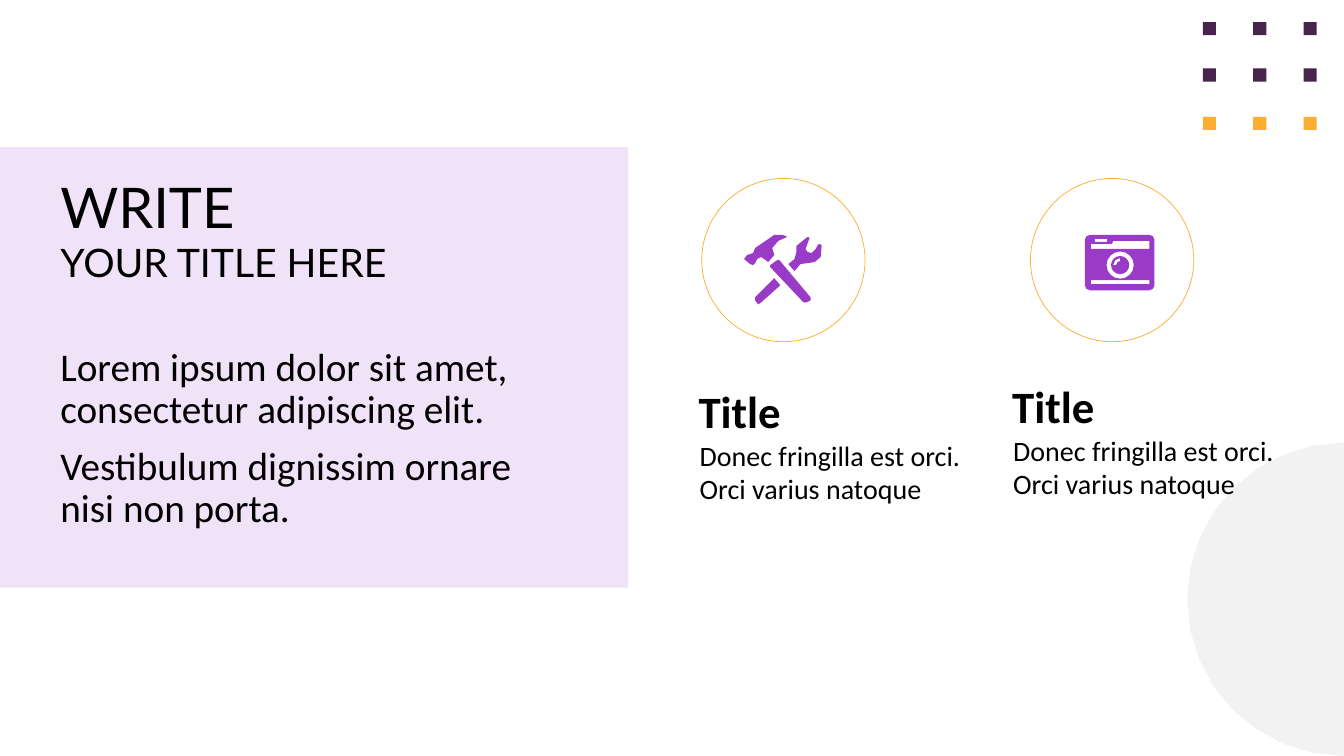
from dataclasses import dataclass
from itertools import product
from math import cos, radians, sin

from lxml.etree import SubElement
from pptx import Presentation
from pptx.dml.color import RGBColor
from pptx.enum.shapes import MSO_SHAPE
from pptx.enum.text import MSO_ANCHOR, MSO_AUTO_SIZE
from pptx.oxml.ns import qn
from pptx.shapes.autoshape import Shape
from pptx.shapes.shapetree import GroupShapes, SlideShapes
from pptx.util import Pt

PX = 9144  # 100 px to the inch
COLORS = {
    "purple": "993BC7",
    "plum": "47244C",
    "amber": "FDAD32",
    "gray": "F2F2F2",
    "black": "000000",
}
Point = tuple[float, float]
Path = list[Point]
Shapes = SlideShapes | GroupShapes


@dataclass
class Label:
    lines: list[str]
    left: int
    top: int
    width: int
    height: int
    size: int
    face: str = "Calibri"
    bold: bool = False
    space: int = 0
    pitch: float = 1.0
    grow: bool = True


@dataclass
class Topic:
    ring: int
    left: int
    top: int


TOPICS = [Topic(696, 683, 376), Topic(1022, 994, 371)]
LABELS = [
    Label(["WRITE"], 50, 166, 528, 77, 40, "Lato"),
    Label(["YOUR TITLE HERE"], 50, 232, 572, 57, 28, "Lato"),
    Label(
        [
            "Lorem ipsum dolor sit amet, consectetur adipiscing elit.",
            "Vestibulum dignissim ornare nisi non porta.",
        ],
        50, 340, 528, 270, 28, space=10, pitch=0.9, grow=False,
    ),
]

HAMMER: Path = [
    (751, 257), (755, 255), (762, 260), (768, 253), (766, 246), (772, 239),
    (781, 235), (776, 233), (768, 233), (755, 242), (749, 246), (747, 251),
    (741, 253), (738, 257), (744, 262), (747, 263), (749, 261),
]
HANDLE: Path = [
    (773, 258), (771, 258), (764, 263), (764, 265), (797, 300), (800, 300),
    (804, 298), (804, 295),
]
WRENCH: Path = [
    (815, 243), (812, 242), (809, 247), (805, 251), (801, 250), (799, 247),
    (803, 236), (801, 235), (790, 244), (790, 250), (788, 257), (782, 262),
    (788, 269), (794, 262), (801, 261), (808, 260), (814, 255),
]
SHAFT: Path = [
    (749, 295), (749, 298), (752, 302), (755, 300), (774, 283), (768, 276),
]


def arc(
    x: float, y: float, radius: float, start: int, end: int, count: int
) -> Path:
    """Give the ends of count equal steps along an arc."""
    turns = [radians(start + (end - start) * i / count) for i in range(count + 1)]
    return [(x + radius * cos(t), y + radius * sin(t)) for t in turns]


def box(left: int, top: int, right: int, base: int) -> Path:
    return [(left, top), (right, top), (right, base), (left, base)]


def camera() -> list[Path]:
    """Give a rounded body, its cut-outs and the lens."""
    x, y = 1111, 263
    corners = [(1140, 283), (1081, 283), (1081, 238), (1140, 238)]
    body = [
        point
        for i, (cx, cy) in enumerate(corners)
        for point in arc(cx, cy, 5, 90 * i, 90 * i + 90, 2)
    ]
    window = [
        (1140, 239), (1104, 239), (1103, 242), (1082, 242), (1082, 247),
        (1140, 247),
    ]
    glint = arc(x, y, 7, 180, 270, 2) + arc(x, y, 4, 270, 180, 2)
    lens = [arc(x, y, radius, 0, 360, 16)[:-1] for radius in (13.5, 9)]
    cuts = [window, box(1082, 278, 1140, 282), box(1086, 237, 1098, 240)]
    return [body, *cuts, *lens, glint]


def paint(shape: Shape, color: str) -> None:
    shape.shadow.inherit = False
    shape.fill.solid()
    shape.fill.fore_color.rgb = RGBColor.from_string(COLORS[color])
    shape.line.fill.background()


def outline(shapes: Shapes, paths: list[Path], color: str) -> None:
    pen = None
    for path in paths:
        first, *rest = [(x * PX, y * PX) for x, y in path]
        if pen is None:
            pen = shapes.build_freeform(*first)
        else:
            pen.move_to(*first)
        pen.add_line_segments(rest, close=True)
    paint(pen.convert_to_shape(), color)


def block(
    shapes: Shapes, left: int, top: int, width: int, height: int, color: str
) -> Shape:
    spot = [n * PX for n in (left, top, width, height)]
    shape = shapes.add_shape(MSO_SHAPE.RECTANGLE, *spot)
    paint(shape, color)
    return shape


def ring(shapes: Shapes, left: int) -> None:
    spot = [n * PX for n in (left, 177, 162, 162)]
    shape = shapes.add_shape(MSO_SHAPE.OVAL, *spot)
    shape.shadow.inherit = False
    shape.fill.background()
    shape.line.color.rgb = RGBColor.from_string(COLORS["amber"])
    shape.line.width = Pt(0.5)


def write(shapes: Shapes, label: Label) -> None:
    spot = [n * PX for n in (label.left, label.top, label.width, label.height)]
    frame = shapes.add_textbox(*spot).text_frame
    fit = MSO_AUTO_SIZE.SHAPE_TO_FIT_TEXT if label.grow else MSO_AUTO_SIZE.NONE
    setup = {
        "word_wrap": True,
        "auto_size": fit,
        "vertical_anchor": MSO_ANCHOR.TOP,
        "text": "\n".join(label.lines),
    }
    for name, value in setup.items():
        setattr(frame, name, value)
    style = {"name": label.face, "size": Pt(label.size), "bold": label.bold}
    for para in frame.paragraphs:
        para.space_before = Pt(label.space)
        para.line_spacing = label.pitch
        font = para.runs[0].font
        for name, value in style.items():
            setattr(font, name, value)
        font.color.rgb = RGBColor.from_string(COLORS["black"])


def main() -> None:
    deck = Presentation()
    deck.slide_width, deck.slide_height = 1333 * PX, 750 * PX
    shapes = deck.slides.add_slide(deck.slide_layouts[6]).shapes

    outline(shapes, [arc(1333, 594.5, 155.5, 90, 270, 16)], "gray")
    panel = block(shapes, 0, 146, 623, 437, "purple")
    tint = panel.element.spPr.find(".//" + qn("a:srgbClr"))
    SubElement(tint, qn("a:alpha"), val="14000")

    for topic in TOPICS:
        ring(shapes, topic.ring)
    for label in LABELS:
        write(shapes, label)
    note = "Donec fringilla est orci. Orci varius natoque"
    for topic in TOPICS:
        left, top = topic.left, topic.top
        group = shapes.add_group_shape().shapes
        write(group, Label([note], left + 1, top + 54, 311, 77, 20))
        write(group, Label(["Title"], left, top, 151, 64, 32, bold=True))

    outline(shapes, [HAMMER, HANDLE, WRENCH, SHAFT], "purple")
    outline(shapes, camera(), "purple")

    dots = shapes.add_group_shape().shapes
    rows = [(22, "plum"), (68, "plum"), (116, "amber")]
    for (top, color), left in product(rows, (1193, 1243, 1293)):
        block(dots, left, top, 13, 13, color)
    deck.save("out.pptx")


if __name__ == "__main__":
    main()
